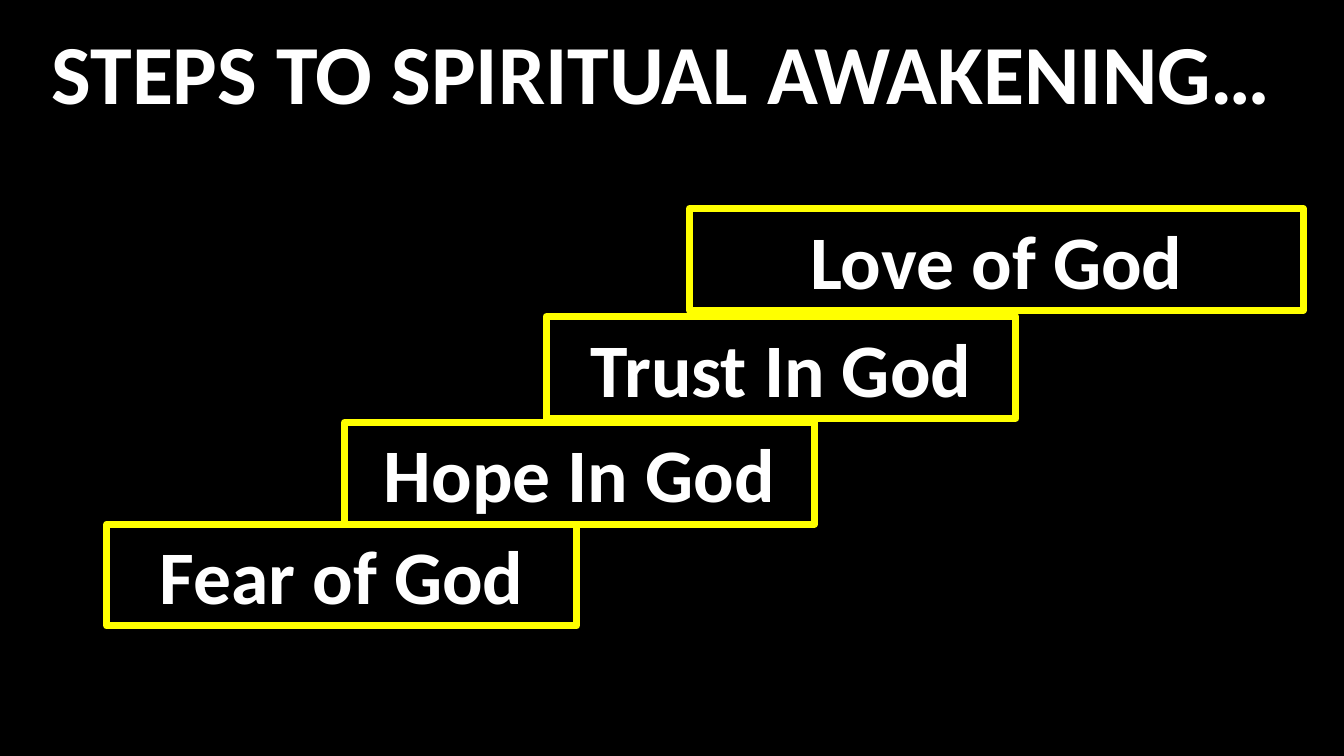
from pptx import Presentation
from pptx.dml.color import RGBColor
from pptx.enum import text
from pptx.util import Pt

BLACK = RGBColor(0x00, 0x00, 0x00)
WHITE = RGBColor(0xFF, 0xFF, 0xFF)
YELLOW = RGBColor(0xFF, 0xFF, 0x00)


class Slide:
    font = "Calibri"
    border = 5

    def __init__(self, deck):
        self.page = deck.slides.add_slide(deck.slide_layouts[6])
        fill = self.page.background.fill
        fill.solid()
        fill.fore_color.rgb = BLACK

    def label(self, words, left, top, width, height, size, inset_x, inset_y):
        box = self.page.shapes.add_textbox(Pt(left), Pt(top), Pt(width), Pt(height))
        frame = box.text_frame
        frame.text = words
        frame.word_wrap = True
        frame.margin_left = frame.margin_right = Pt(inset_x)
        frame.margin_top = frame.margin_bottom = Pt(inset_y)
        font = frame.paragraphs[0].runs[0].font
        font.name = self.font
        font.size = Pt(size)
        font.bold = True
        font.color.rgb = WHITE
        return box

    def title(self, words):
        self.label(words, 27.4, 9.4, 905.8, 527.8, 60, 9.4, 5)

    def step(self, words, left, top, width):
        box = self.label(words, left, top, width, 72.7, 54, 7.2, 3.6)
        box.line.color.rgb = YELLOW
        box.line.width = Pt(self.border)
        frame = box.text_frame
        frame.auto_size = text.MSO_AUTO_SIZE.SHAPE_TO_FIT_TEXT
        frame.paragraphs[0].alignment = text.PP_ALIGN.CENTER


def main():
    deck = Presentation()
    deck.slide_width = Pt(960)
    deck.slide_height = Pt(540)

    slide = Slide(deck)
    slide.title("STEPS TO SPIRITUAL AWAKENING…")
    steps = [
        ("Hope In God", 246.2, 301.7, 335.5),
        ("Fear of God", 76.3, 374.4, 335.5),
        ("Love of God", 492.5, 149, 438.5),
        ("Trust In God", 390.2, 226.1, 335.5),
    ]
    for step in steps:
        slide.step(*step)

    deck.save("out.pptx")


if __name__ == "__main__":
    main()
